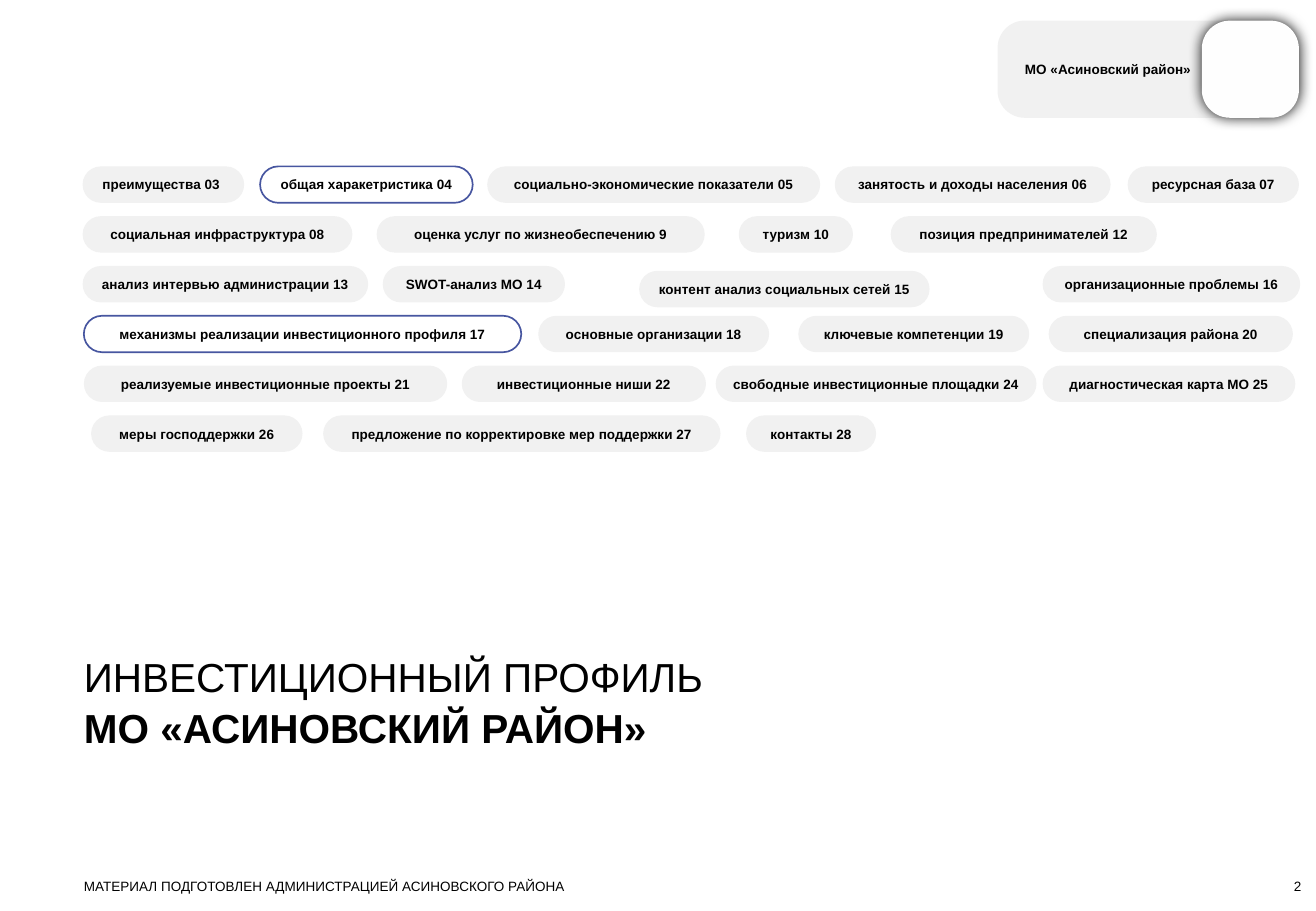
from dataclasses import dataclass

import pptx
import pptx.dml.color
import pptx.enum.shapes
import pptx.enum.text
import pptx.oxml
import pptx.oxml.ns
import pptx.shapes.autoshape
import pptx.slide
import pptx.text.text
import pptx.util
from pptx.util import Inches

PP_ALIGN = pptx.enum.text.PP_ALIGN
ANCHOR = pptx.enum.text.MSO_ANCHOR


@dataclass(frozen=True)
class Theme:
    font: str = "Arial"
    text: str = "000000"
    chip: str = "F1F1F1"
    badge: str = "FEFEFE"
    accent: str = "4756A0"
    small: float = 8
    heading: float = 24


@dataclass(frozen=True)
class Section:
    left: float
    width: float
    label: str
    highlighted: bool = False
    drop: float = 0
    indent: float | None = None  # left-aligned with this inset when given


THEME = Theme()
FIRST_ROW, ROW_STEP, CHIP_HEIGHT = 1.37, 0.41, 0.3
MARGIN = 0.69

ROWS: list[list[Section]] = [
    [
        Section(0.68, 1.33, "преимущества 03", indent=0.12),
        Section(2.14, 1.75, "общая харакетристика 04", highlighted=True),
        Section(4.01, 2.74, "социально-экономические показатели 05"),
        Section(6.87, 2.27, "занятость и доходы населения 06"),
        Section(9.28, 1.41, "ресурсная база 07"),
    ],
    [
        Section(0.68, 2.22, "социальная инфраструктура 08"),
        Section(3.1, 2.7, "оценка услуг по жизнеобеспечению 9"),
        Section(6.08, 0.94, "туризм 10"),
        Section(7.33, 2.19, "позиция предпринимателей 12"),
    ],
    [
        Section(0.68, 2.35, "анализ интервью администрации 13"),
        Section(3.15, 1.5, "SWOT-анализ МО 14"),
        Section(5.26, 2.39, "контент анализ социальных сетей 15", drop=0.04),
        Section(8.58, 2.12, "организационные проблемы 16"),
    ],
    [
        Section(0.69, 3.6, "механизмы реализации инвестиционного профиля 17", highlighted=True),
        Section(4.43, 1.9, "основные организации 18"),
        Section(6.57, 1.9, "ключевые компетенции 19"),
        Section(8.63, 2.01, "специализация района 20"),
    ],
    [
        Section(0.69, 2.99, "реализуемые инвестиционные проекты 21"),
        Section(3.8, 2.01, "инвестиционные ниши 22"),
        Section(5.89, 2.64, "свободные инвестиционные площадки 24"),
        Section(8.58, 2.08, "диагностическая карта МО 25"),
    ],
    [
        Section(0.75, 1.74, "меры господдержки 26"),
        Section(2.66, 3.27, "предложение по корректировке мер поддержки 27"),
        Section(6.14, 1.07, "контакты 28"),
    ],
]


def rgb(value: str) -> pptx.dml.color.RGBColor:
    return pptx.dml.color.RGBColor.from_string(value)


def set_insets(frame: pptx.text.text.TextFrame, left: float = 0, top: float = 0,
               right: float = 0, bottom: float = 0) -> None:
    frame.margin_left, frame.margin_top = Inches(left), Inches(top)
    frame.margin_right, frame.margin_bottom = Inches(right), Inches(bottom)
    frame.word_wrap = True


def style(paragraph: pptx.text.text._Paragraph, size: float, bold: bool = False,
          align: PP_ALIGN = PP_ALIGN.LEFT) -> None:
    paragraph.alignment = align
    paragraph.font.name = THEME.font
    paragraph.font.size = pptx.util.Pt(size)
    paragraph.font.bold = bold
    paragraph.font.color.rgb = rgb(THEME.text)


def add_rounded(slide: pptx.slide.Slide, left: float, top: float, width: float, height: float,
                radius: float, fill: str | None) -> pptx.shapes.autoshape.Shape:
    """Add a flat rounded rectangle; without a fill it gets an accent outline."""
    shape = slide.shapes.add_shape(pptx.enum.shapes.MSO_SHAPE.ROUNDED_RECTANGLE,
                                   Inches(left), Inches(top), Inches(width), Inches(height))
    shape.adjustments[0] = radius
    shape.shadow.inherit = False
    if fill:
        shape.fill.solid()
        shape.fill.fore_color.rgb = rgb(fill)
        shape.line.fill.background()
    else:
        shape.fill.background()
        shape.line.color.rgb = rgb(THEME.accent)
        shape.line.width = pptx.util.Pt(1)
    return shape


def add_section(slide: pptx.slide.Slide, section: Section, top: float) -> None:
    chip = add_rounded(slide, section.left, top + section.drop, section.width, CHIP_HEIGHT,
                       0.5, None if section.highlighted else THEME.chip)
    frame = chip.text_frame
    set_insets(frame, left=section.indent or 0)
    frame.vertical_anchor = ANCHOR.MIDDLE
    frame.text = section.label
    align = PP_ALIGN.CENTER if section.indent is None else PP_ALIGN.LEFT
    style(frame.paragraphs[0], THEME.small, True, align)


def add_glow_shadow(shape: pptx.shapes.autoshape.Shape) -> None:
    """Put a soft shadow evenly around the shape."""
    effects = shape.element.spPr.find(pptx.oxml.ns.qn("a:effectLst"))
    effects.append(pptx.oxml.parse_xml(
        f'<a:outerShdw {pptx.oxml.ns.nsdecls("a")} blurRad="{pptx.util.Pt(8.4)}" dist="0" dir="0"'
        ' algn="ctr" rotWithShape="0"><a:srgbClr val="000000"><a:alpha val="92000"/></a:srgbClr>'
        '</a:outerShdw>'))


def add_header(slide: pptx.slide.Slide) -> None:
    district = add_rounded(slide, 8.21, 0.17, 2.47, 0.8, 0.28, THEME.chip)
    frame = district.text_frame
    set_insets(frame, 0.16, 0.05, 0.79, 0.05)
    frame.vertical_anchor = ANCHOR.MIDDLE
    frame.text = "МО «Асиновский район»"
    style(frame.paragraphs[0], THEME.small, True)
    add_glow_shadow(add_rounded(slide, 9.89, 0.17, 0.8, 0.8, 0.29, THEME.badge))


def add_title(slide: pptx.slide.Slide) -> None:
    title = slide.shapes.title
    title.left, title.top = Inches(MARGIN), Inches(5.34)
    title.width, title.height = Inches(8), Inches(0.81)
    frame = title.text_frame
    set_insets(frame)
    frame.auto_size = pptx.enum.text.MSO_AUTO_SIZE.NONE
    frame.vertical_anchor = ANCHOR.TOP
    frame.text = "ИНВЕСТИЦИОННЫЙ ПРОФИЛЬ\nМО «АСИНОВСКИЙ РАЙОН»"
    for paragraph, bold in zip(frame.paragraphs, (False, True)):
        style(paragraph, THEME.heading, bold)
        paragraph.line_spacing = 1.06


def add_footer_text(slide: pptx.slide.Slide, text: str, left: float, width: float,
                    align: PP_ALIGN, anchor: ANCHOR) -> None:
    box = slide.shapes.add_textbox(Inches(left), Inches(7.23), Inches(width), Inches(0.13))
    set_insets(box.text_frame)
    box.text_frame.vertical_anchor = anchor
    box.text_frame.text = text
    style(box.text_frame.paragraphs[0], THEME.small, align=align)


def main() -> None:
    deck = pptx.Presentation()
    deck.slide_width, deck.slide_height = Inches(10.83), Inches(7.5)
    slide = deck.slides.add_slide(deck.slide_layouts.get_by_name("Title Only"))
    for index, row in enumerate(ROWS):
        for section in row:
            add_section(slide, section, FIRST_ROW + index * ROW_STEP)
    add_title(slide)
    add_footer_text(slide, "МАТЕРИАЛ ПОДГОТОВЛЕН АДМИНИСТРАЦИЕЙ АСИНОВСКОГО РАЙОНА",
                    MARGIN, 8, PP_ALIGN.LEFT, ANCHOR.TOP)
    add_footer_text(slide, "2", 9.91, 0.8, PP_ALIGN.RIGHT, ANCHOR.BOTTOM)
    add_header(slide)
    deck.save("out.pptx")


if __name__ == "__main__":
    main()
